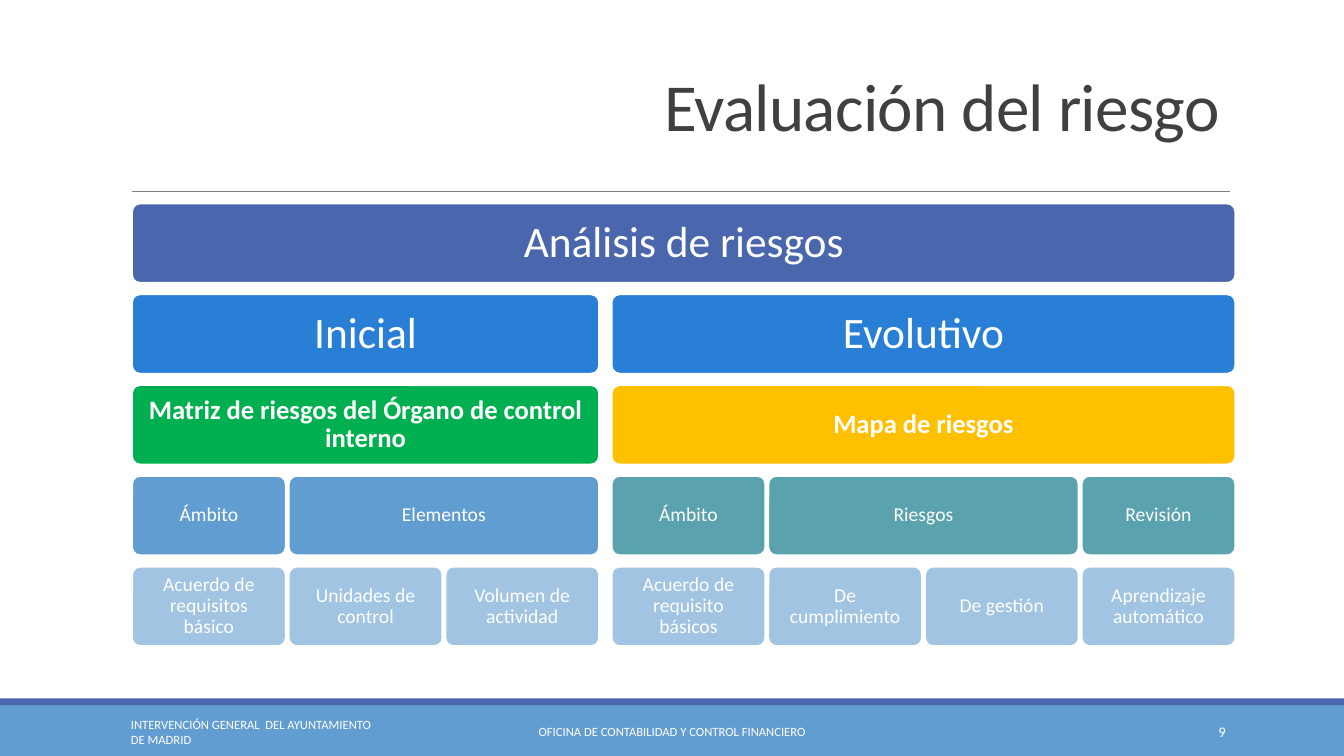
import pptx
import pptx.util
import pptx.dml.color
import pptx.enum.shapes
import pptx.enum.text
from lxml import etree

Cm = pptx.util.Cm
Pt = pptx.util.Pt
Shape = pptx.enum.shapes.MSO_SHAPE
Align = pptx.enum.text.PP_ALIGN

COLORS = {
    "white": "FFFFFF", "ink": "404040", "rule": "808080",
    "navy": "4A66AC", "blue": "297FD5", "green": "00B050", "gold": "FFC000",
    "sky": "629DD1", "teal": "5AA2AE", "pale": "A1C4E3",
}
WIDTH, HEIGHT = 33.87, 19.05

# Level of the chart: text size, inset, bold
LEVELS = [(31, 0.39, False), (31, 0.39, False), (19, 0.27, True),
          (14, 0.21, False), (14, 0.21, False)]

# Tiles: level, first column, columns spanned, color, text
TILES = [
    (0, 0, 7, "navy", "Análisis de riesgos"),
    (1, 0, 3, "blue", "Inicial"),
    (1, 3, 4, "blue", "Evolutivo"),
    (2, 0, 3, "green", "Matriz de riesgos del Órgano de control interno"),
    (2, 3, 4, "gold", "Mapa de riesgos"),
    (3, 0, 1, "sky", "Ámbito"),
    (3, 1, 2, "sky", "Elementos"),
    (3, 3, 1, "teal", "Ámbito"),
    (3, 4, 2, "teal", "Riesgos"),
    (3, 6, 1, "teal", "Revisión"),
    (4, 0, 1, "pale", "Acuerdo de requisitos básico"),
    (4, 1, 1, "pale", "Unidades de control"),
    (4, 2, 1, "pale", "Volumen de actividad"),
    (4, 3, 1, "pale", "Acuerdo de requisito básicos"),
    (4, 4, 1, "pale", "De cumplimiento"),
    (4, 5, 1, "pale", "De gestión"),
    (4, 6, 1, "pale", "Aprendizaje automático"),
]


def color(name):
    return pptx.dml.color.RGBColor.from_string(COLORS[name])


def write(shape, text, size, align, ink="white", bold=False, inset=None, lead=1.0):
    """Fill a shape with one vertically centred paragraph; return its run."""
    frame = shape.text_frame
    frame.word_wrap = True
    frame.vertical_anchor = pptx.enum.text.MSO_ANCHOR.MIDDLE
    if inset is not None:
        frame.margin_left = frame.margin_right = Cm(inset)
        frame.margin_top = frame.margin_bottom = Cm(inset)
    frame.text = text
    para = frame.paragraphs[0]
    para.alignment = align
    para.line_spacing = lead
    run = para.runs[0]
    run.font.name = "Calibri"
    run.font.size = Pt(size)
    run.font.bold = bold
    run.font.color.rgb = color(ink)
    return run


def add_block(slide, kind, box, fill):
    shape = slide.shapes.add_shape(kind, *map(Cm, box))
    shape.shadow.inherit = False
    shape.fill.solid()
    shape.fill.fore_color.rgb = color(fill)
    shape.line.fill.background()
    return shape


def add_title(slide, left, top, width, height):
    """Right-aligned heading with a thin rule along the bottom of the box."""
    line = slide.shapes.add_connector(
        pptx.enum.shapes.MSO_CONNECTOR.STRAIGHT,
        Cm(left), Cm(top + height), Cm(left + width), Cm(top + height))
    line.line.color.rgb = color("rule")
    line.line.width = Pt(0.5)
    etree.SubElement(line._element.spPr, pptx.oxml.ns.qn("a:effectLst"))
    indent = 8.5
    box = slide.shapes.add_textbox(
        Cm(left + indent), Cm(top), Cm(width - indent), Cm(height))
    run = write(box, "Evaluación del riesgo", 48, Align.RIGHT, "ink", lead=0.85)
    run._r.get_or_add_rPr().set("spc", "-50")


def add_chart(slide, left, top, width, height):
    """Tiles on a grid of seven columns, with a wider gap after the third."""
    gap, split, space = 0.08, 0.24, 0.29
    step = (width - split + gap) / 7
    tall = (height + space) / len(LEVELS)
    for level, first, span, fill, text in TILES:
        size, inset, bold = LEVELS[level]
        last = first + span - 1
        start = first * step + (split if first >= 3 else 0)
        end = (last + 1) * step - gap + (split if last >= 3 else 0)
        tile = add_block(slide, Shape.ROUNDED_RECTANGLE,
                         (left + start, top + level * tall,
                          end - start, tall - space), fill)
        tile.adjustments[0] = 0.1
        tile.line.color.rgb = color("white")
        tile.line.width = Pt(1.25)
        write(tile, text, size, Align.CENTER, bold=bold, inset=inset, lead=0.9)


def add_footer(slide, left, top, width, height):
    strip = 0.17
    add_block(slide, Shape.RECTANGLE,
              (left, top + strip, width, height - strip), "sky")
    add_block(slide, Shape.RECTANGLE, (left, top, width, strip), "navy")
    notes = [
        (3.05, 6.86, "INTERVENCIÓN GENERAL  DEL AYUNTAMIENTO DE MADRID", 9, Align.LEFT),
        (10.24, 13.39, "OFICINA DE CONTABILIDAD Y CONTROL FINANCIERO", 9, Align.CENTER),
        (27.51, 3.63, "9", 10.5, Align.RIGHT),
    ]
    for shift, wide, text, size, align in notes:
        box = slide.shapes.add_textbox(
            Cm(left + shift), Cm(top + 0.34), Cm(wide), Cm(1.01))
        write(box, text, size, align)


def main():
    deck = pptx.Presentation()
    deck.slide_width, deck.slide_height = Cm(WIDTH), Cm(HEIGHT)
    slide = deck.slides.add_slide(deck.slide_layouts[6])
    add_footer(slide, 0, 17.6, WIDTH, HEIGHT - 17.6)
    add_title(slide, 3.33, 0.79, 27.66, 4.03)
    add_chart(slide, 3.33, 5.13, 27.8, 11.15)
    deck.save("out.pptx")


if __name__ == "__main__":
    main()
